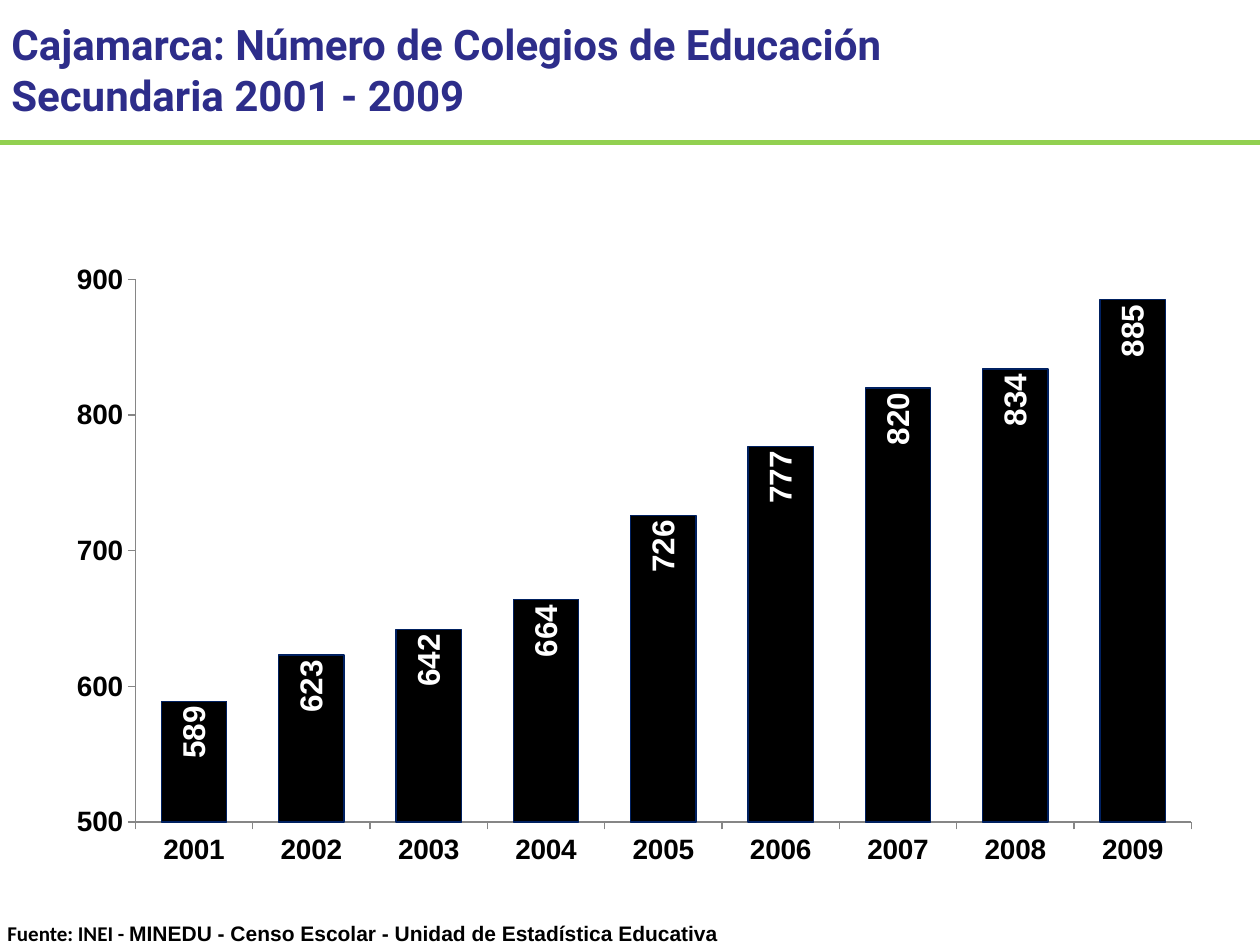
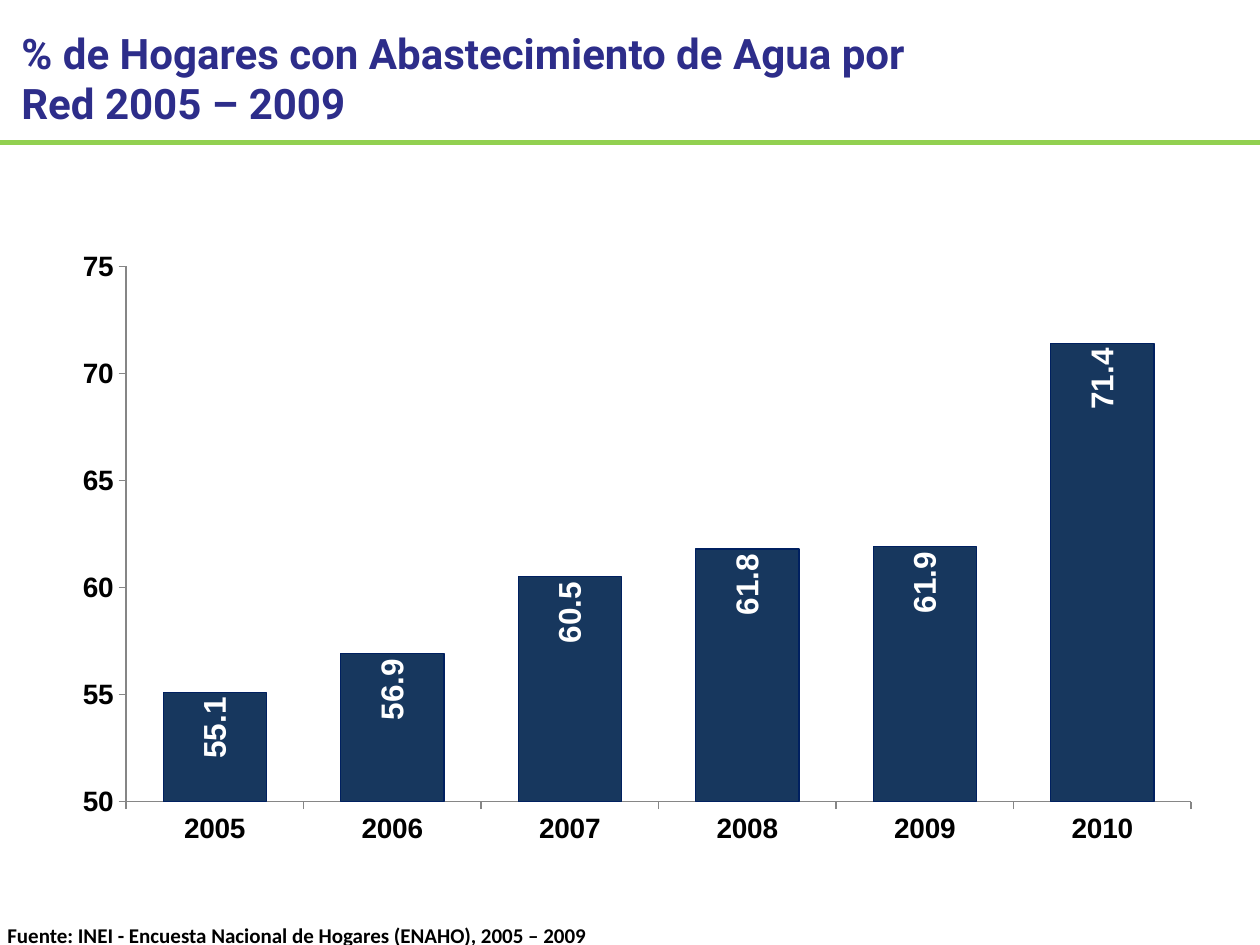
import pptx
import pptx.chart.data
import pptx.dml.color
import pptx.enum.chart
import pptx.enum.shapes
import pptx.enum.text
import pptx.oxml
import pptx.util
from lxml import etree

Pt = pptx.util.Pt
CHART_NS = "http://schemas.openxmlformats.org/drawingml/2006/chart"


def color(hex_value):
    return pptx.dml.color.RGBColor.from_string(hex_value)


def set_font(font, name, size, hex_value):
    font.name, font.size, font.bold = name, Pt(size), True
    font.color.rgb = color(hex_value)


class Deck:
    """Shared style and the slide being built."""
    WIDTH, HEIGHT = 720, 540
    TITLE, RULE, TEXT = "2D2D8A", "92D050", "000000"
    BAR_EDGE, LABEL, AXIS = "002060", "FFFFFF", "868686"

    def __init__(self):
        self.prs = pptx.Presentation()
        self.prs.slide_width = Pt(self.WIDTH)
        self.prs.slide_height = Pt(self.HEIGHT)
        self.slide = None

    def new_slide(self, heading, heading_box):
        self.slide = self.prs.slides.add_slide(self.prs.slide_layouts[5])
        self.title(heading, heading_box)

    def title(self, text, box):
        title = self.slide.shapes.title
        title.left, title.top, title.width, title.height = map(Pt, box)
        frame = title.text_frame
        frame.text = text
        frame.word_wrap = True
        frame.auto_size = pptx.enum.text.MSO_AUTO_SIZE.NONE
        frame.vertical_anchor = pptx.enum.text.MSO_ANCHOR.MIDDLE
        heading = frame.paragraphs[0]
        heading.alignment = pptx.enum.text.PP_ALIGN.LEFT
        set_font(heading.font, "Roboto", 24, self.TITLE)

    def rule(self):
        y = Pt(81.36)
        rule = self.slide.shapes.add_connector(
            pptx.enum.shapes.MSO_CONNECTOR.STRAIGHT, 0, y, Pt(self.WIDTH), y)
        rule.line.color.rgb = color(self.RULE)
        rule.line.width = Pt(3)
        etree.SubElement(rule._element.spPr, pptx.oxml.ns.qn("a:effectLst"))

    def source(self, top, width, *parts):
        """Source line; each part is a (text, font name) pair."""
        box = self.slide.shapes.add_textbox(Pt(-2.88), Pt(top), Pt(width), Pt(21.6))
        box.text_frame.word_wrap = True
        paragraph = box.text_frame.paragraphs[0]
        for text, font_name in parts:
            run = paragraph.add_run()
            run.text = text
            set_font(run.font, font_name, 12, self.TEXT)

    def columns(self, box, years, values, scale, number_format, fill, gap, overlap, plot_area):
        data = pptx.chart.data.CategoryChartData(number_format=number_format)
        data.categories = years
        data.add_series("Series 1", values)
        chart = self.slide.shapes.add_chart(
            pptx.enum.chart.XL_CHART_TYPE.COLUMN_STACKED, *map(Pt, box), data).chart
        chart.has_legend = chart.has_title = False
        set_font(chart.font, "Arial", 16, self.TEXT)

        # Axes
        for axis in (chart.category_axis, chart.value_axis):
            axis.has_major_gridlines = False
            axis.major_tick_mark = pptx.enum.chart.XL_TICK_MARK.OUTSIDE
            axis.format.line.color.rgb = color(self.AXIS)
            axis.format.line.width = Pt(0.75)
            set_font(axis.tick_labels.font, "Arial", 16, self.TEXT)
        value_axis = chart.value_axis
        value_axis.minimum_scale, value_axis.maximum_scale, value_axis.major_unit = scale
        value_axis.tick_labels.number_format = "0"
        value_axis.tick_labels.number_format_is_linked = False

        # Bars
        plot = chart.plots[0]
        plot.vary_by_categories = False
        plot.gap_width, plot.overlap = gap, overlap
        bars = plot.series[0]
        bars.format.fill.solid()
        bars.format.fill.fore_color.rgb = color(fill)
        bars.format.line.color.rgb = color(self.BAR_EDGE)
        bars.format.line.width = Pt(0.75)

        # Upright value labels
        labels = bars.data_labels
        labels.show_value = True
        labels.number_format, labels.number_format_is_linked = number_format, False
        labels.position = pptx.enum.chart.XL_LABEL_POSITION.INSIDE_END
        set_font(labels.font, "Arial", 18, self.LABEL)
        label_body = labels._element.find(".//" + pptx.oxml.ns.qn("a:bodyPr"))
        label_body.set("rot", "-5400000")
        label_body.set("vert", "horz")

        self.place_plot(chart, plot_area)

    def place_plot(self, chart, plot_area):
        area = chart._chartSpace.chart.plotArea
        for old in area.findall(pptx.oxml.ns.qn("c:layout")):
            area.remove(old)
        settings = [("layoutTarget", "inner"), ("xMode", "edge"), ("yMode", "edge")]
        settings += zip("xywh", plot_area)
        layout = etree.Element(f"{{{CHART_NS}}}layout")
        manual = etree.SubElement(layout, f"{{{CHART_NS}}}manualLayout")
        for tag, value in settings:
            etree.SubElement(manual, f"{{{CHART_NS}}}{tag}").set("val", str(value))
        area.insert(0, layout)


def main():
    deck = Deck()

    # Secondary schools
    deck.new_slide("Cajamarca: Número de Colegios de Educación Secundaria 2001 - 2009",
                   (-0.72, 7.2, 556.56, 64.8))
    deck.columns((30.96, 145.44, 663.12, 356.4),
                 [str(year) for year in range(2001, 2010)],
                 [589, 623, 642, 664, 726, 777, 820, 834, 885],
                 scale=(500, 900, 100), number_format="#,##0", fill="000000",
                 gap=80, overlap=100, plot_area=(0.07, 0.04, 0.91, 0.87))
    deck.source(522.72, 608.4, ("Fuente: INEI - ", "Calibri"),
                ("MINEDU - Censo Escolar - Unidad de Estadística Educativa", "Arial"))
    deck.rule()

    # Households with piped water
    deck.new_slide("% de Hogares con Abastecimiento de Agua por Red 2005 – 2009",
                   (5.04, 11.52, 550.08, 65.52))
    deck.columns((25.2, 133.92, 668.88, 364.32),
                 [str(year) for year in range(2005, 2011)],
                 [55.1, 56.9, 60.5, 61.8, 61.9, 71.4],
                 scale=(50, 75, 5), number_format="#,##0.0", fill="17375E",
                 gap=72, overlap=-100, plot_area=(0.07, 0.05, 0.91, 0.84))
    deck.source(523.44, 624.96,
                ("Fuente: INEI - Encuesta Nacional de Hogares (ENAHO), 2005 – 2009", "Calibri"))
    deck.rule()

    deck.prs.save("out.pptx")


if __name__ == "__main__":
    main()
